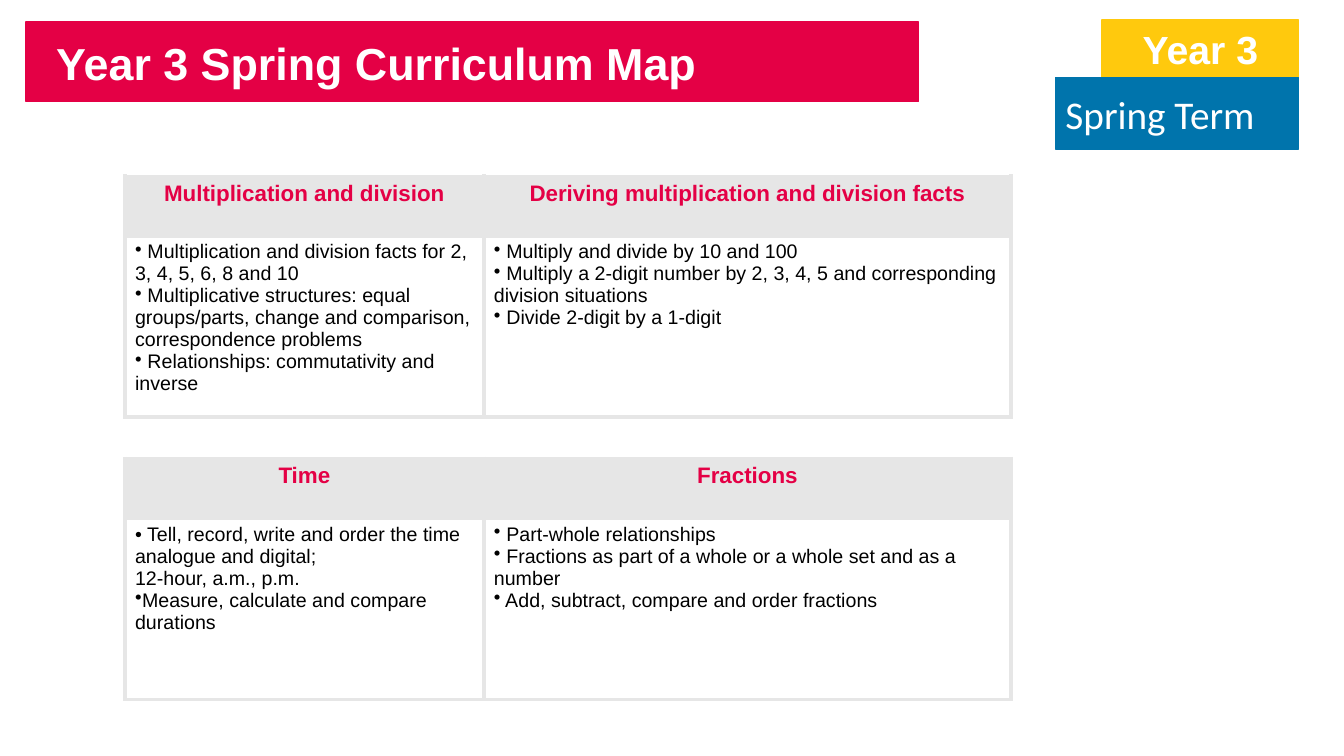
from lxml.etree import SubElement
from pptx import Presentation
from pptx.dml.color import RGBColor
from pptx.enum.shapes import MSO_SHAPE as Shape
from pptx.enum.text import MSO_ANCHOR as Anchor, PP_ALIGN as Align
from pptx.oxml import parse_xml
from pptx.oxml.ns import nsdecls, qn
from pptx.util import Inches, Pt

COL, ROW = Inches(13.33) / 100, Inches(7.5) / 100
RED, YELLOW, BLUE = "E40045", "FFC90D", "0074AC"
GREY, WHITE, BLACK = "E6E6E6", "FFFFFF", "000000"
TABLE_LEFT = 9.3
TABLE_COLS, TABLE_ROWS = (26.7, 39.23), (7.87, 24)

MULTIPLICATION = {
    "Multiplication and division": [
        ("•", " Multiplication and division facts for 2, 3, 4, 5, 6, 8 and 10"),
        ("•", " Multiplicative structures: equal groups/parts, change and "
              "comparison, correspondence problems"),
        ("•", " Relationships: commutativity and inverse"),
    ],
    "Deriving multiplication and division facts": [
        ("•", " Multiply and divide by 10 and 100"),
        ("•", " Multiply a 2-digit number by 2, 3, 4, 5 and corresponding "
              "division situations"),
        ("•", " Divide 2-digit by a 1-digit"),
    ],
}
TIME_AND_FRACTIONS = {
    "Time": [
        ("", "• Tell, record, write and order the time analogue and digital;"),
        ("", "12-hour, a.m., p.m."),
        ("•", "Measure, calculate and compare durations"),
    ],
    "Fractions": [
        ("•", " Part-whole relationships"),
        ("•", " Fractions as part of a whole or a whole set and as a number"),
        ("•", " Add, subtract, compare and order fractions"),
    ],
}


def rgb(color):
    return RGBColor.from_string(color)


def box(x, y, w, h):
    return round(x * COL), round(y * ROW), round(w * COL), round(h * ROW)


def add_run(p, text, size, color, bold=False, font="Arial"):
    r = p.add_run()
    r.text = text
    r.font.size, r.font.bold, r.font.name = Pt(size), bold, font
    r.font.color.rgb = rgb(color)


def add_block(s, area, color):
    sp = s.shapes.add_shape(Shape.RECTANGLE, *box(*area))
    sp.shadow.inherit = False
    sp.fill.solid()
    sp.fill.fore_color.rgb = sp.line.color.rgb = rgb(color)
    sp.line.width = Pt(1)
    return sp.text_frame


def add_label(s, area, color, text, align, anchor, **style):
    tf = add_block(s, area, color)
    tf.vertical_anchor = anchor
    p = tf.paragraphs[0]
    p.alignment = align
    add_run(p, text, 28, WHITE, **style)


def add_title(s, area, text):
    tf = s.shapes.add_textbox(*box(*area)).text_frame
    tf.word_wrap = False
    add_run(tf.paragraphs[0], text, 32, WHITE, bold=True)


def set_bullet(p, mark):
    pPr = p._p.get_or_add_pPr()
    pPr.set("marL", "0")
    pPr.set("indent", "0")
    SubElement(pPr, qn("a:buChar"), char=mark)


def set_borders(cell, color, width):
    tcPr = cell._tc.get_or_add_tcPr()
    for i, side in enumerate("LRTB"):
        tcPr.insert(i, parse_xml(
            f'<a:ln{side} {nsdecls("a")} w="{Pt(width)}"><a:solidFill>'
            f'<a:srgbClr val="{color}"/></a:solidFill></a:ln{side}>'))


def fill_header(cell, text):
    cell.fill.solid()
    cell.fill.fore_color.rgb = rgb(GREY)
    p = cell.text_frame.paragraphs[0]
    p.alignment = Align.CENTER
    add_run(p, text, 16, RED, bold=True)


def fill_body(cell, items):
    cell.fill.background()
    tf = cell.text_frame
    for i, (mark, text) in enumerate(items):
        p = tf.add_paragraph() if i else tf.paragraphs[0]
        if mark:
            set_bullet(p, mark)
        add_run(p, text, 14, BLACK)


def add_topics(s, top, topics):
    area = box(TABLE_LEFT, top, sum(TABLE_COLS), sum(TABLE_ROWS))
    table = s.shapes.add_table(2, len(topics), *area).table
    table.first_row = table.horz_banding = False
    for row, height in zip(table.rows, TABLE_ROWS):
        row.height = round(height * ROW)
    for c, (heading, items) in enumerate(topics.items()):
        table.columns[c].width = round(TABLE_COLS[c] * COL)
        fill_header(table.cell(0, c), heading)
        fill_body(table.cell(1, c), items)
    for cell in table.iter_cells():
        set_borders(cell, GREY, 3)


def main():
    prs = Presentation()
    prs.slide_width, prs.slide_height = round(100 * COL), round(100 * ROW)
    s = prs.slides.add_slide(prs.slide_layouts[6])
    add_block(s, (1.95, 2.93, 66.39, 10.53), RED)
    add_label(s, (82, 2.67, 14.63, 7.6), YELLOW, "Year 3",
              Align.CENTER, Anchor.TOP, bold=True)
    add_label(s, (78.54, 10.27, 18.08, 9.47), BLUE, "Spring Term",
              Align.LEFT, Anchor.MIDDLE, font="Calibri")
    add_title(s, (3.45, 4.13, 49.59, 8.53), "Year 3 Spring Curriculum Map")
    add_topics(s, 23.33, MULTIPLICATION)
    add_topics(s, 60.67, TIME_AND_FRACTIONS)
    prs.save("out.pptx")


if __name__ == "__main__":
    main()
